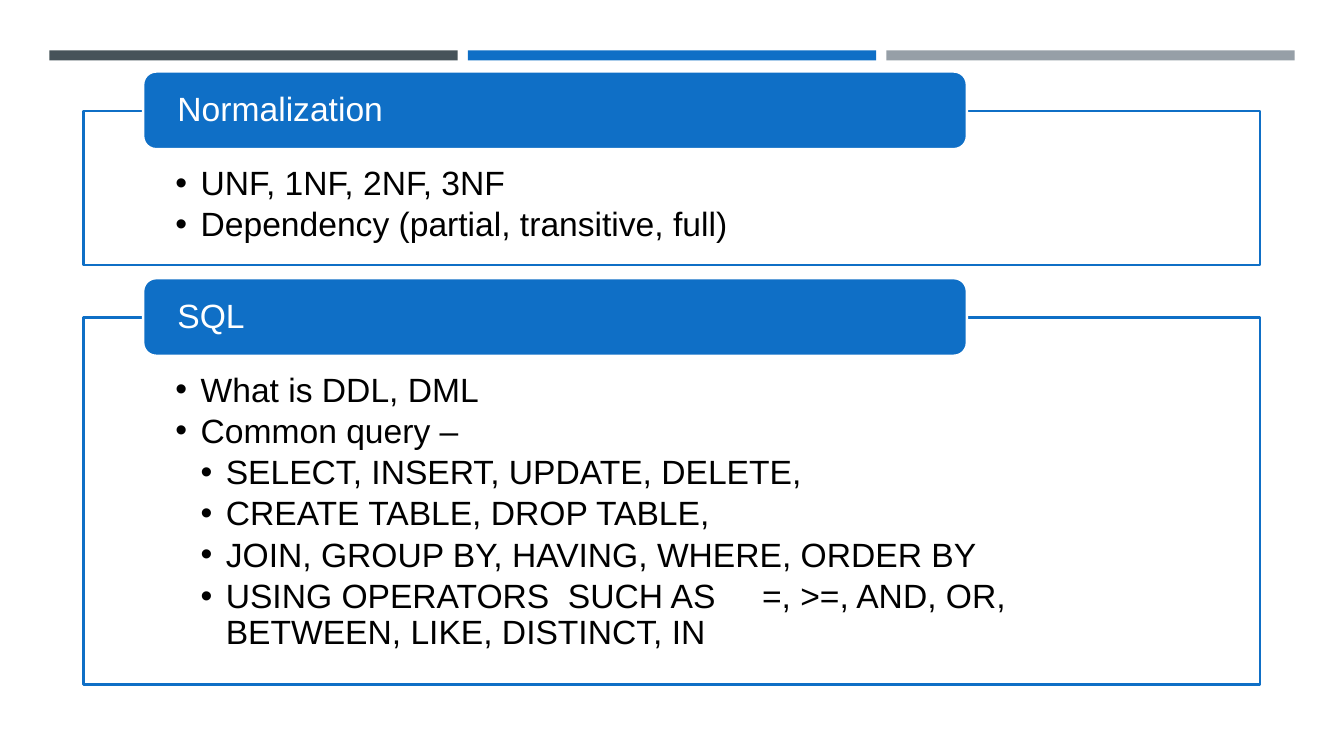
from dataclasses import dataclass

from lxml.etree import SubElement
from pptx import Presentation
from pptx.dml.color import RGBColor
from pptx.enum.shapes import MSO_SHAPE
from pptx.enum.text import MSO_ANCHOR, MSO_AUTO_SIZE, PP_ALIGN
from pptx.oxml.ns import qn
from pptx.util import Inches, Pt

BLUE = RGBColor(0x0F, 0x6F, 0xC6)
SLATE = RGBColor(0x46, 0x53, 0x59)
GREY = RGBColor(0x96, 0x9F, 0xA7)
WHITE = RGBColor(0xFF, 0xFF, 0xFF)
BLACK = RGBColor(0x00, 0x00, 0x00)

Box = tuple[float, float, float, float]


@dataclass
class Topic:
    head: str
    items: list[tuple[int, str]]  # level and wording
    top: float
    height: float
    head_id: int
    body_id: int


TOPICS = [
    Topic("Normalization", [
        (1, "UNF, 1NF, 2NF, 3NF"),
        (1, "Dependency (partial, transitive, full)"),
    ], 1.1, 1.53, 0, 2),
    Topic("SQL", [
        (1, "What is DDL, DML"),
        (1, "Common query –"),
        (2, "SELECT, INSERT, UPDATE, DELETE,"),
        (2, "CREATE TABLE, DROP TABLE,"),
        (2, "JOIN, GROUP BY, HAVING, WHERE, ORDER BY"),
        (2, "USING OPERATORS  SUCH AS     =, >=, AND, OR, "
            "BETWEEN, LIKE, DISTINCT, IN"),
    ], 3.15, 3.64, 3, 4),
]


def draw(slide, kind: MSO_SHAPE, box: Box, fill: RGBColor,
         edge: RGBColor | None = None):
    shape = slide.shapes.add_shape(kind, *map(Inches, box))
    shape.shadow.inherit = False
    shape.fill.solid()
    shape.fill.fore_color.rgb = fill
    if edge is None:
        shape.line.fill.background()
    else:
        shape.line.color.rgb = edge
        shape.line.width = Pt(1.75)
    return shape


def place(slide, key: int, box: Box, pads: Box, anchor: MSO_ANCHOR):
    """Move a placeholder to the front and set up its frame."""
    holder = next(p for p in slide.placeholders
                  if p.placeholder_format.idx == key)
    slide.shapes.element.append(holder.element)
    holder.left, holder.top, holder.width, holder.height = map(Inches, box)
    frame = holder.text_frame
    frame.word_wrap = True
    frame.auto_size = MSO_AUTO_SIZE.NONE
    frame.vertical_anchor = anchor
    (frame.margin_left, frame.margin_top,
     frame.margin_right, frame.margin_bottom) = map(Inches, pads)
    return frame


def write(para, text: str, color: RGBColor, after: float) -> None:
    para.alignment = PP_ALIGN.LEFT
    para.line_spacing = 0.9
    para.space_before = Pt(0)
    para.space_after = Pt(after)
    run = para.add_run()
    run.text = text
    run.font.name = "Arial"
    run.font.size = Pt(24)
    run.font.bold = False
    run.font.color.rgb = color


def bullet(para, level: int) -> None:
    para.level = level
    props = para._p.get_or_add_pPr()
    props.set("marL", str(Inches(0.25 * level)))
    props.set("indent", str(Inches(-0.25)))
    SubElement(props, qn("a:buFont"), typeface="Arial")
    SubElement(props, qn("a:buChar"), char="•")


def add_topic(slide, topic: Topic) -> None:
    # Framed list
    box = (0.83, topic.top, 11.67, topic.height)
    panel = draw(slide, MSO_SHAPE.RECTANGLE, box, WHITE, BLUE)
    tint = panel.fill._xPr.find(qn("a:solidFill"))[0]
    SubElement(tint, qn("a:alpha"), val="90000")
    frame = place(slide, topic.body_id, box, (0.91, 0.55, 0.91, 0.19),
                  MSO_ANCHOR.TOP)
    for num, (level, text) in enumerate(topic.items):
        para = frame.add_paragraph() if num else frame.paragraphs[0]
        write(para, text, BLACK, 3.6)
        bullet(para, level)

    # Heading bar over the top edge
    draw(slide, MSO_SHAPE.ROUNDED_RECTANGLE,
         (1.42, topic.top - 0.39, 8.17, 0.77), BLUE, WHITE)
    frame = place(slide, topic.head_id, (1.45, topic.top - 0.35, 8.09, 0.7),
                  (0.31, 0, 0.31, 0), MSO_ANCHOR.MIDDLE)
    write(frame.paragraphs[0], topic.head, WHITE, 0)


def main() -> None:
    deck = Presentation()
    deck.slide_width, deck.slide_height = Inches(13.33), Inches(7.5)
    slide = deck.slides.add_slide(deck.slide_layouts.get_by_name("Comparison"))

    # Bands along the top
    for num, color in enumerate((SLATE, BLUE, GREY)):
        draw(slide, MSO_SHAPE.RECTANGLE,
             (0.49 + 4.15 * num, 0.5, 4.05, 0.1), color)

    # Topics
    for topic in TOPICS:
        add_topic(slide, topic)

    # Unused placeholders
    for holder in list(slide.placeholders):
        if not holder.text_frame.text:
            slide.shapes.element.remove(holder.element)

    deck.save("out.pptx")


if __name__ == "__main__":
    main()
